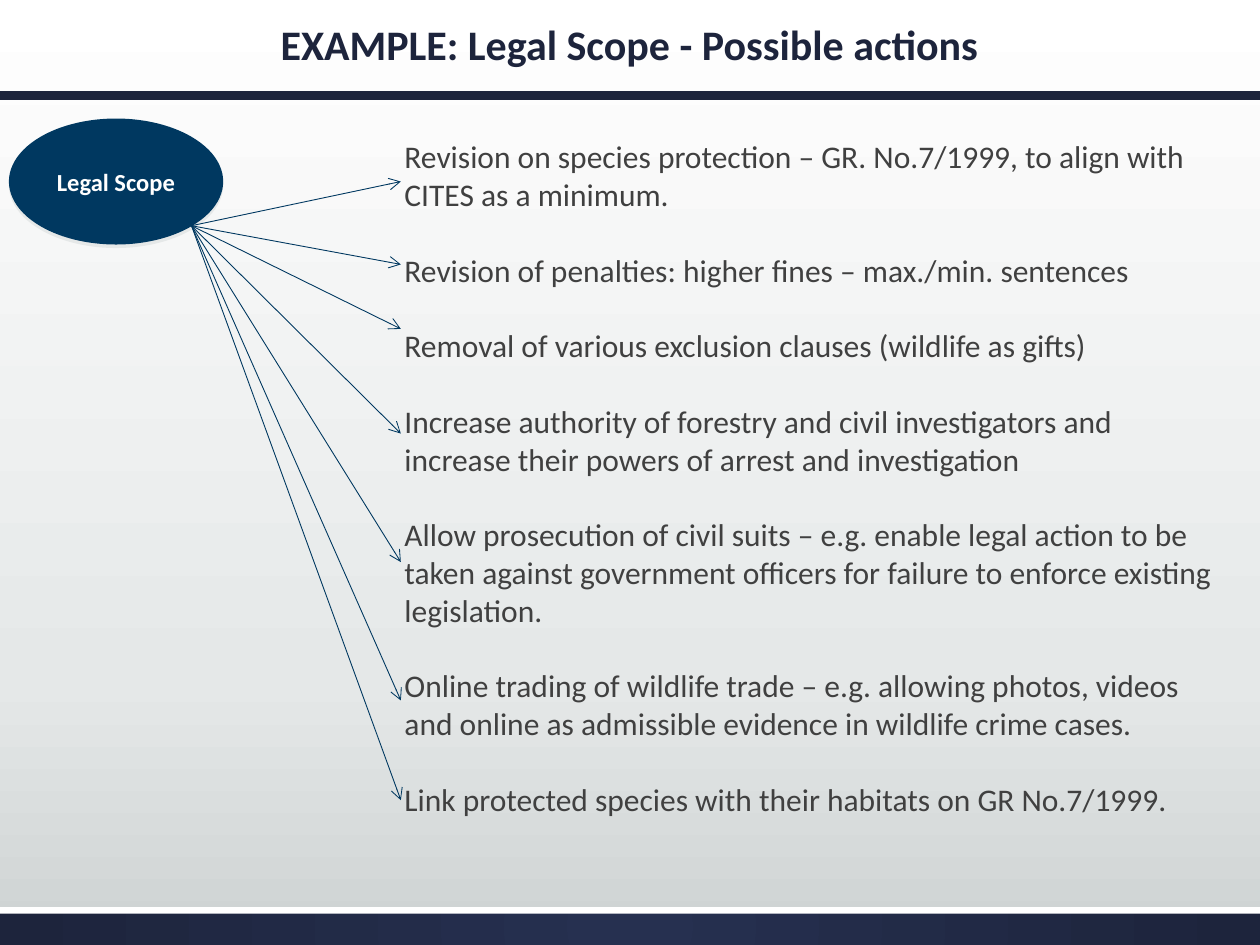
"""Build the Legal Scope slide: one topic with arrows to its possible actions."""
from lxml import etree
from pptx import Presentation
from pptx import util as u
from pptx.dml.color import RGBColor
from pptx.enum import shapes, text
from pptx.oxml import parse_xml
from pptx.oxml.ns import nsdecls, qn

COLOURS = {"navy": "1D243C", "indigo": "263050", "blue": "003860", "grey": "404040",
           "white": "FFFFFF", "mist": "E5E8E8", "silver": "CDD2D2"}
ACTIONS = [
    ("Revision on species protection – GR. No.7/1999, to align with CITES as a minimum.", 3.66),
    ("Revision of penalties: higher fines – max./min. sentences", 5.33),
    ("Removal of various exclusion clauses (wildlife as gifts)", 6.63),
    ("Increase authority of forestry and civil investigators and increase their powers "
     "of arrest and investigation", 8.74),
    ("Allow prosecution of civil suits – e.g. enable legal action to be taken against "
     "government officers for failure to enforce existing legislation.", 11.33),
    ("Online trading of wildlife trade – e.g. allowing photos, videos and online as "
     "admissible evidence in wildlife crime cases.", 14.12),
    ("Link protected species with their habitats on GR No.7/1999.", 16.13),
]


def set_gradient(fill, parent, stops, direction):
    fill.gradient()
    old = next(parent.iter(qn("a:gradFill")))
    listed = "".join(f'<a:gs pos="{place * 1000}"><a:srgbClr val="{COLOURS[name]}"/></a:gs>'
                     for place, name in stops)
    old.getparent().replace(old, parse_xml(
        f'<a:gradFill {nsdecls("a")} rotWithShape="1"><a:gsLst>{listed}</a:gsLst>'
        f'{direction}</a:gradFill>'))


def add_words(paragraph, words, size, colour, bold=False):
    run = paragraph.add_run()
    run.text = words
    run.font.name = "Calibri"
    run.font.size = u.Pt(size)
    run.font.bold = bold
    run.font.color.rgb = RGBColor.from_string(COLOURS[colour])


deck = Presentation()
deck.slide_width, deck.slide_height = u.Cm(25.4), u.Cm(19.05)
slide = deck.slides.add_slide(deck.slide_layouts[1])
set_gradient(slide.background.fill, slide.element, [(0, "white"), (72, "mist"), (100, "silver")],
             '<a:lin ang="5400000" scaled="0"/>')

footer = slide.shapes.add_shape(shapes.MSO_SHAPE.RECTANGLE, 0, u.Cm(18.29), u.Cm(25.4), u.Cm(0.76))
set_gradient(footer.fill, footer.element, [(0, "indigo"), (100, "navy")],
             '<a:path path="circle"><a:fillToRect l="50000" t="50000" r="50000" b="50000"/></a:path>')
footer_edge = slide.shapes.add_shape(shapes.MSO_SHAPE.RECTANGLE, 0, u.Cm(18.29), u.Cm(25.4), u.Cm(0.13))
topic = slide.shapes.add_shape(shapes.MSO_SHAPE.OVAL, u.Cm(0.18), u.Cm(2.39), u.Cm(4.32), u.Cm(2.54))
for part, colour in ((footer_edge, "white"), (topic, "blue")):
    part.fill.solid()
    part.fill.fore_color.rgb = RGBColor.from_string(COLOURS[colour])
for part in (footer, footer_edge, topic):
    part.line.fill.background()
    part.shadow.inherit = False

topic_shadow = topic.element.spPr.find(qn("a:effectLst"))
topic_shadow.append(parse_xml(
    f'<a:outerShdw {nsdecls("a")} blurRad="0" dist="25400" dir="5400000" rotWithShape="0">'
    f'<a:srgbClr val="{COLOURS["mist"]}"/></a:outerShdw>'))
topic.text_frame.vertical_anchor = text.MSO_ANCHOR.MIDDLE
topic.text_frame.paragraphs[0].alignment = text.PP_ALIGN.CENTER
add_words(topic.text_frame.paragraphs[0], "Legal Scope", 14, "white", True)

title = slide.shapes.title
title.left, title.top, title.width, title.height = u.Cm(0.84), u.Cm(0.43), u.Cm(23.7), u.Cm(1.09)
title.text_frame.vertical_anchor = text.MSO_ANCHOR.BOTTOM
title.text_frame.auto_size = text.MSO_AUTO_SIZE.NONE
title.text_frame.paragraphs[0].alignment = text.PP_ALIGN.CENTER
add_words(title.text_frame.paragraphs[0], "EXAMPLE: Legal Scope - Possible actions", 24, "navy", True)

actions = slide.placeholders[1]
actions.left, actions.top, actions.width, actions.height = u.Cm(7.9), u.Cm(2.64), u.Cm(17), u.Cm(15.65)
actions.text_frame.vertical_anchor = text.MSO_ANCHOR.TOP
actions.text_frame.auto_size = text.MSO_AUTO_SIZE.NONE
for number, (action, _) in enumerate(ACTIONS):
    paragraph = actions.text_frame.add_paragraph() if number else actions.text_frame.paragraphs[0]
    properties = paragraph._p.get_or_add_pPr()
    properties.set("marL", "0")
    properties.set("indent", "0")
    etree.SubElement(properties, qn("a:buNone"))
    paragraph.line_spacing = u.Pt(21.6)
    paragraph.space_before = u.Pt(21.6 if number else 0)
    add_words(paragraph, action, 18, "grey")

links = [(3.86, 4.55, 8.08, end, "blue", 0.5) for _, end in ACTIONS]
for left, top, right, bottom, colour, weight in [(0, 1.93, 25.4, 1.93, "navy", 5)] + links:
    line = slide.shapes.add_connector(shapes.MSO_CONNECTOR.STRAIGHT,
                                      u.Cm(left), u.Cm(top), u.Cm(right), u.Cm(bottom))
    line.line.color.rgb = RGBColor.from_string(COLOURS[colour])
    line.line.width = u.Pt(weight)
    if colour == "blue":
        etree.SubElement(line.line._get_or_add_ln(), qn("a:tailEnd"), type="arrow")
    etree.SubElement(line.element.spPr, qn("a:effectLst"))

deck.save("out.pptx")
